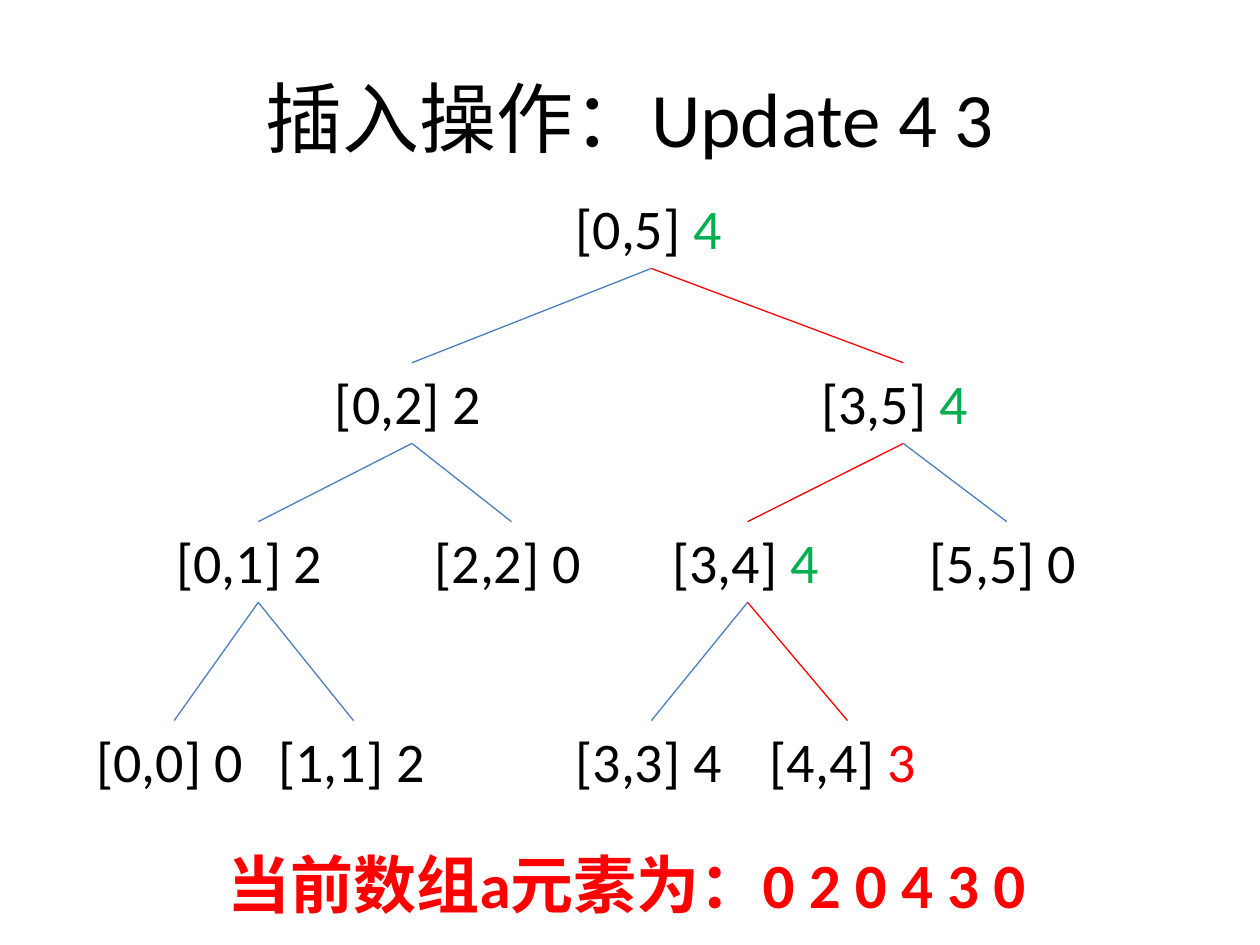
from lxml.etree import SubElement
from pptx import Presentation
from pptx.dml.color import RGBColor
from pptx.enum.shapes import MSO_CONNECTOR
from pptx.enum.text import MSO_ANCHOR, MSO_AUTO_SIZE, PP_ALIGN
from pptx.oxml.ns import qn
from pptx.util import Pt

BLACK, GREEN, RED, BLUE = "000000", "00B050", "FF0000", "4B7EBC"
ROW_TOPS = [0, 100, 190.8, 304.5]
NODE_HEIGHT = 46.1
NODES = {
    1: ("[0,5]", 4, 273.8, 100.8),
    2: ("[0,2]", 2, 136.3, 102.2),
    3: ("[3,5]", 4, 414.2, 108),
    4: ("[0,1]", 2, 45.6, 108),
    5: ("[2,2]", 0, 193.2, 102.2),
    6: ("[3,4]", 4, 329.2, 100),
    7: ("[5,5]", 0, 476.2, 102.2),
    8: ("[0,0]", 0, 0, 103),
    9: ("[1,1]", 2, 104, 100),
    12: ("[3,3]", 4, 273.8, 100.8),
    13: ("[4,4]", 3, 384.8, 103),
}
VALUE_COLORS = {1: GREEN, 3: GREEN, 6: GREEN, 13: RED}


def color(hex_string):
    return RGBColor.from_string(hex_string)


def add_run(paragraph, text, size, hex_string, bold=False):
    run = paragraph.add_run()
    run.text = text
    formats = {"name": "Calibri", "size": Pt(size), "bold": bold}
    for name, value in formats.items():
        setattr(run.font, name, value)
    run.font.color.rgb = color(hex_string)


def place(shape, left, top, width, height):
    box = {"left": left, "top": top, "width": width, "height": height}
    for name, value in box.items():
        setattr(shape, name, Pt(value))


def add_text_box(slide, left, top, width, height):
    shape = slide.shapes.add_textbox(Pt(left), Pt(top), Pt(width), Pt(height))
    shape.text_frame.word_wrap = True
    shape.text_frame.auto_size = MSO_AUTO_SIZE.SHAPE_TO_FIT_TEXT
    return shape


def add_title(slide, left, top, width, height):
    title = slide.shapes.title
    place(title, left, top, width, height)
    title.text_frame.vertical_anchor = MSO_ANCHOR.MIDDLE
    paragraph = title.text_frame.paragraphs[0]
    paragraph.alignment = PP_ALIGN.CENTER
    add_run(paragraph, "插入操作：Update 4 3", 44, BLACK)


def add_edge(slide, parent, child, hex_string):
    edge = slide.shapes.add_connector(MSO_CONNECTOR.STRAIGHT, 0, 0, 0, 0)
    edge.begin_connect(parent, 2)
    edge.end_connect(child, 0)
    edge.line.color.rgb = color(hex_string)
    edge.line.width = Pt(0.75)
    SubElement(edge._element.spPr, qn("a:effectLst"))


def add_tree(slide, left, top):
    shapes = {}
    for index, (interval, value, offset, width) in NODES.items():
        row_top = top + ROW_TOPS[index.bit_length() - 1]
        shape = add_text_box(slide, left + offset, row_top, width, NODE_HEIGHT)
        paragraph = shape.text_frame.paragraphs[0]
        add_run(paragraph, f"{interval} ", 32, BLACK)
        add_run(paragraph, str(value), 32, VALUE_COLORS.get(index, BLACK))
        shapes[index] = shape
    for index, shape in shapes.items():
        if index > 1:
            edge_color = RED if index in VALUE_COLORS else BLUE
            add_edge(slide, shapes[index // 2], shape, edge_color)


def add_array_line(slide, left, top, width, height):
    shape = add_text_box(slide, left, top, width, height)
    paragraph = shape.text_frame.paragraphs[0]
    add_run(paragraph, "当前数组a元素为：0 2 0 4 3 0", 36, RED, bold=True)


def main():
    presentation = Presentation()
    presentation.slide_width, presentation.slide_height = Pt(720), Pt(540)
    slide = presentation.slides.add_slide(presentation.slide_layouts[5])
    add_title(slide, 36, 21.6, 648, 90)
    add_tree(slide, 48, 107.3)
    add_array_line(slide, 123, 479.5, 544.3, 51)
    presentation.save("out.pptx")


if __name__ == "__main__":
    main()
